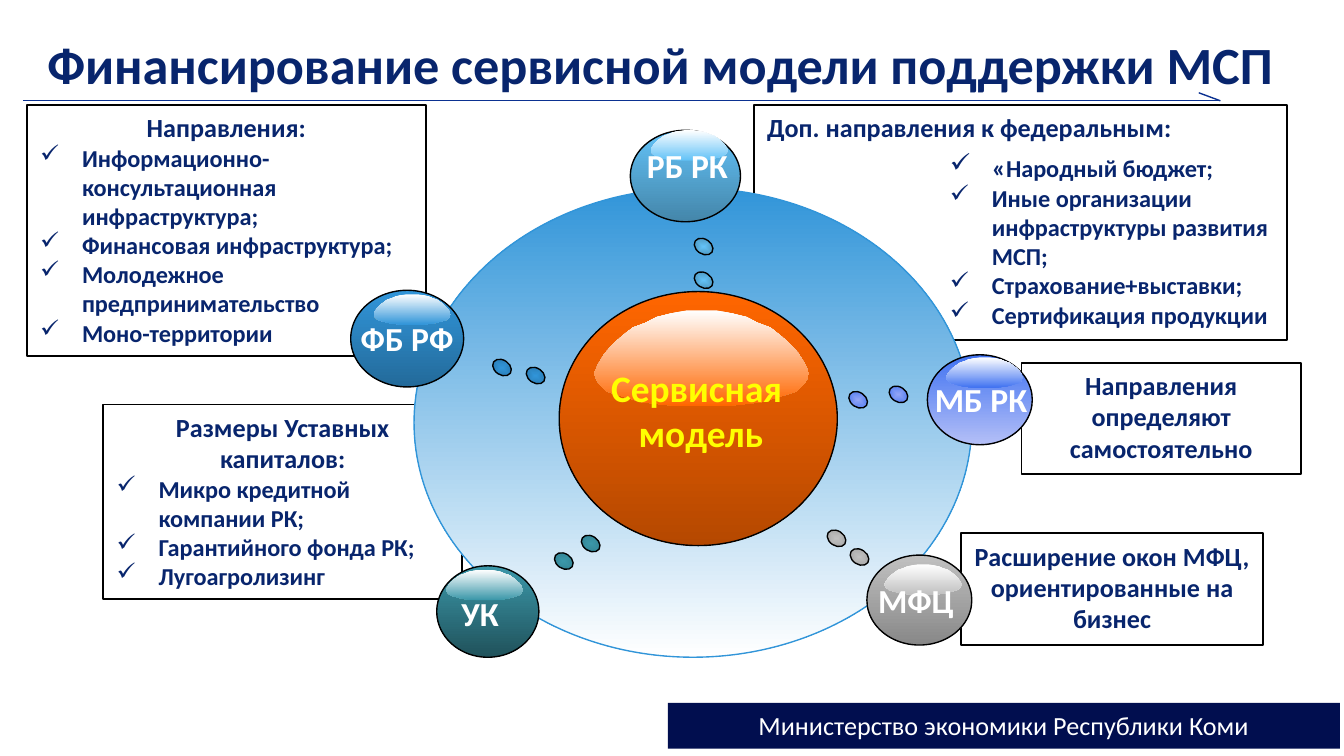
from pptx import Presentation
from pptx.dml.color import RGBColor
from pptx.enum.shapes import MSO_SHAPE
from pptx.enum.text import MSO_ANCHOR, PP_ALIGN
from pptx.oxml.ns import qn
from pptx.util import Pt
from lxml.etree import SubElement

NAVY, WHITE, BLACK = "08256D", "FFFFFF", "000000"
SIDE = [(50, 0), (57, 0), (64, 3), (71, 7), (76, 13), (82, 18), (87, 27),
        (91, 35), (95, 45), (98, 56), (100, 66), (99, 72), (98, 76),
        (94, 85), (87, 90), (78, 96), (67, 99), (60, 100)]
RIM = SIDE + [(100 - x, y) for x, y in reversed(SIDE[1:])]


def color(code):
    return RGBColor.from_string(code)


def inner(box, left, top, wide, high):
    return box[0] + left, box[1] + top, wide, high


def write(shape, lines, size=14, ink=NAVY, bold=True, align="l",
          anchor=MSO_ANCHOR.TOP, wrap=True, marks=()):
    frame = shape.text_frame
    frame.word_wrap = wrap
    frame.vertical_anchor = anchor
    for i, line in enumerate(lines):
        para = frame.paragraphs[0] if i == 0 else frame.add_paragraph()
        mark = i in marks
        para.alignment = PP_ALIGN.CENTER if align == "c" and not mark else PP_ALIGN.LEFT
        if mark:
            props = para._p.get_or_add_pPr()
            props.set("marL", str(Pt(22.5)))
            props.set("indent", str(-Pt(22.5)))
            SubElement(props, qn("a:buChar")).set("char", "✓")
        runs = [(line, 13 if mark else size)] if isinstance(line, str) else line
        for part, scale in runs:
            run = para.add_run()
            run.text = part
            font = run.font
            font.name, font.size, font.bold = "Calibri", Pt(scale), bold
            font.color.rgb = color(ink)


def label(slide, box, lines, **form):
    write(slide.shapes.add_textbox(*map(Pt, box)), lines, **form)


def paint(shape, fill=None, line=None, width=0.75):
    shape.shadow.inherit = False
    if fill is None:
        shape.fill.background()
    elif isinstance(fill, str):
        shape.fill.solid()
        shape.fill.fore_color.rgb = color(fill)
    else:
        shape.fill.gradient()
        shape.fill.gradient_angle = 270
        for stop, code in zip(shape.fill.gradient_stops, fill):
            stop.color.rgb = color(code)
    if line:
        shape.line.color.rgb = color(line)
        shape.line.width = Pt(width)
    else:
        shape.line.fill.background()


def form(slide, kind, box, *style):
    shape = slide.shapes.add_shape(kind, *map(Pt, box))
    paint(shape, *style)
    return shape


def gloss(slide, box, tint):
    left, top, wide, high = box
    spots = [(Pt(left + wide * x / 100), Pt(top + high * y / 100)) for x, y in RIM]
    build = slide.shapes.build_freeform(*spots[0], scale=1.0)
    build.add_line_segments(spots[1:], close=True)
    paint(build.convert_to_shape(), (WHITE, tint))


def dot(slide, box, tints):
    shape = form(slide, MSO_SHAPE.OVAL, box, tints, BLACK)
    shape.rotation = 303.8
    grad = shape._element.spPr.find(qn("a:gradFill"))
    grad.remove(grad.find(qn("a:lin")))
    glow = SubElement(grad, qn("a:path"))
    glow.set("path", "shape")
    rect = SubElement(glow, qn("a:fillToRect"))
    for edge in "ltrb":
        rect.set(edge, "50000")


def head(slide, box):
    label(slide, inner(box, 0, 0, box[2], 37.4),
          ["Финансирование сервисной модели поддержки МСП"],
          size=28, align="c", anchor=MSO_ANCHOR.MIDDLE)
    tip = box[0] + 646.6, box[1] + 38.9
    for left, top in ((5, 38.9), (635, 34.6)):
        ends = box[0] + left, box[1] + top, *tip
        line = slide.shapes.add_connector(1, *map(Pt, ends))
        line.line.color.rgb = color("0B3191")
        line.line.width = Pt(0.75)
        SubElement(line._element.spPr, qn("a:effectLst"))


def note(slide, box, lines, width=1, **style):
    write(form(slide, MSO_SHAPE.RECTANGLE, box, None, BLACK, width), lines, **style)


def hub(slide, box):
    form(slide, MSO_SHAPE.OVAL, box, ("3195D9", WHITE), "3195D9")
    form(slide, MSO_SHAPE.OVAL, inner(box, 77.8, 55.4, 149, 136.1),
         ("FF6600", "B54800"), BLACK)
    gloss(slide, inner(box, 96.5, 65.5, 115.2, 51.1), "FF6600")
    label(slide, inner(box, 97.9, 91.4, 111.6, 55.4), ["Сервисная ", "модель"],
          size=20, ink="FFFF00", align="c", wrap=False)


def ball(slide, box, name, tints, shine, spot):
    form(slide, MSO_SHAPE.OVAL, box, tints, BLACK)
    gloss(slide, inner(box, *shine, 41.4, 16.2), tints[0])
    label(slide, inner(box, *spot, 28.8), [name],
          size=18, ink=WHITE, align="c", wrap=False)


def foot(slide, box):
    bar = form(slide, MSO_SHAPE.RECTANGLE, box, "010E4F")
    write(bar, ["Министерство экономики Республики Коми"],
          ink=WHITE, bold=False, align="c")


def main():
    deck = Presentation()
    deck.slide_width, deck.slide_height = Pt(720), Pt(405)
    slide = deck.slides.add_slide(deck.slide_layouts[6])
    foot(slide, (357.8, 376.6, 360, 24.5))
    note(slide, (403.9, 56.2, 285.8, 126), ["Доп. направления к федеральным:"], 1.25)
    note(slide, (514.8, 285.8, 162, 59.8),
         ["Расширение окон МФЦ, ориентированные на бизнес"], align="c")
    note(slide, (547.2, 194.4, 149.8, 59.8),
         ["Направления определяют самостоятельно"], align="c")
    note(slide, (55.4, 216.7, 192.2, 104.4),
         ["Размеры Уставных капиталов:", "Микро кредитной компании РК;",
          "Гарантийного фонда РК;", "Лугоагролизинг"],
         align="c", marks=range(1, 4))
    note(slide, (14.4, 56.2, 213.8, 134.6),
         ["Направления:", "Информационно-консультационная инфраструктура;",
          "Финансовая инфраструктура;", "Молодежное предпринимательство",
          "Моно-территории"], 1.25, align="c", marks=range(1, 5))
    hub(slide, (221.8, 100.8, 298.8, 251.3))
    balls = [
        ((337.7, 69.8, 59, 49), "РБ РК", ("63C2F7", "4486AA"), (10.8, 0), (1.4, 4.3, 58.3)),
        ((234, 303.1, 54.7, 49), "УК ", ("3B97A9", "20525B"), (5, 2.2), (5.8, 10.8, 38.9)),
        ((496.8, 190.1, 56.2, 48.2), "МБ РК", ("4173F1", "B4BFF7"), (10, 1.4), (-3.6, 9.4, 64.8)),
        ((464.4, 297.4, 56.2, 48.2), "МФЦ", ("C0C0C0", "888888"), (9.4, 5), (-1.4, 10, 55.4)),
        ((187.9, 155.5, 60.5, 51.8), "ФБ РФ", ("3195D9", "236A9A"), (12.2, 2.2), (-2.2, 11.5, 64.8)),
    ]
    for item in balls:
        ball(slide, *item)
    pairs = [
        (("3B97A9", "317F8E"), (298.1, 295.2), (312.5, 285.8)),
        (("C0C0C0", "A1A1A1"), (456.5, 293), (444.2, 283)),
        (("3195D9", "2775AB"), (265, 191.5), (283, 195.8)),
        (("63C2F7", "468AAF"), (373, 126.7), (373, 144.7)),
        (("92A4F5", "4173F1"), (477.4, 205.9), (455.8, 208.8)),
    ]
    for tints, *spots in pairs:
        for spot in spots:
            dot(slide, (*spot, 7.9, 10.8), tints)
    label(slide, (501.8, 77.8, 188.6, 103),
          [[("«", 14), ("Народный бюджет;", 13)],
           "Иные организации инфраструктуры развития МСП;",
           "Страхование+выставки;", "Сертификация продукции"], marks=range(4))
    head(slide, (7.2, 15.1, 692.6, 39))
    deck.save("out.pptx")


if __name__ == "__main__":
    main()
